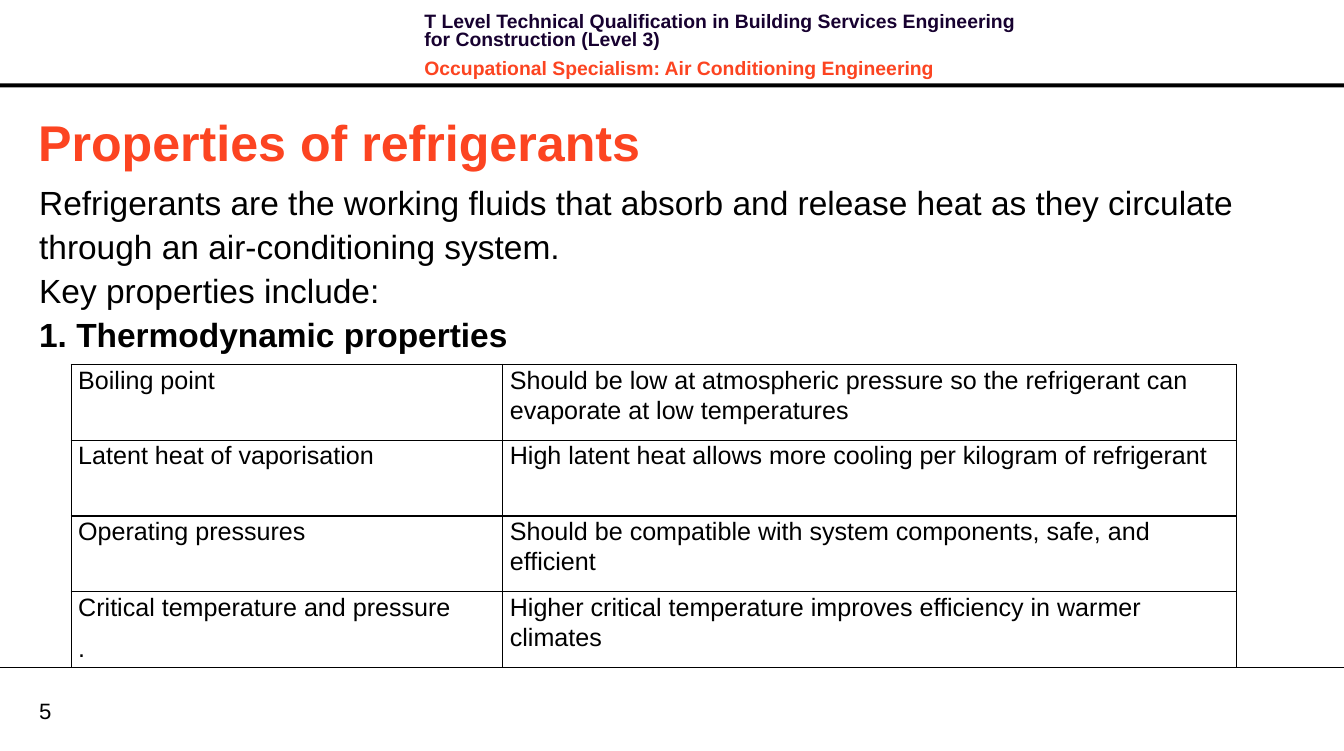
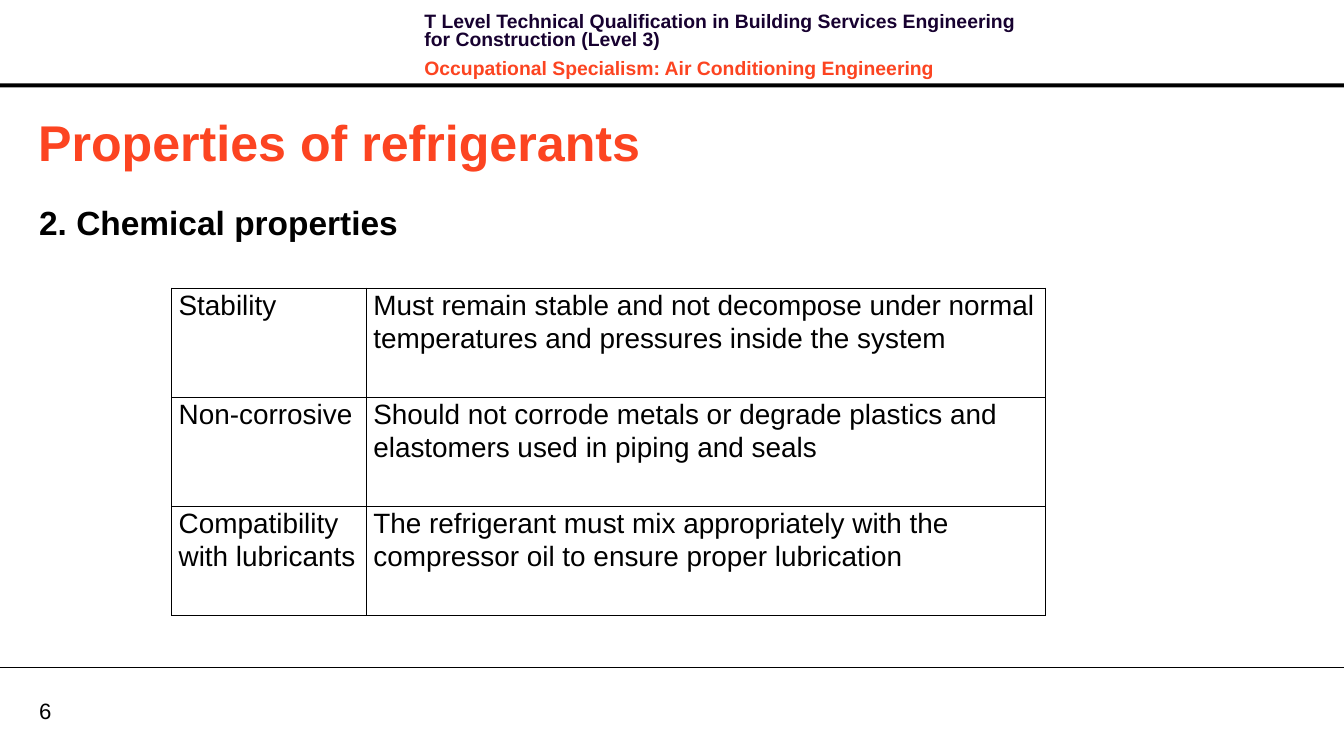
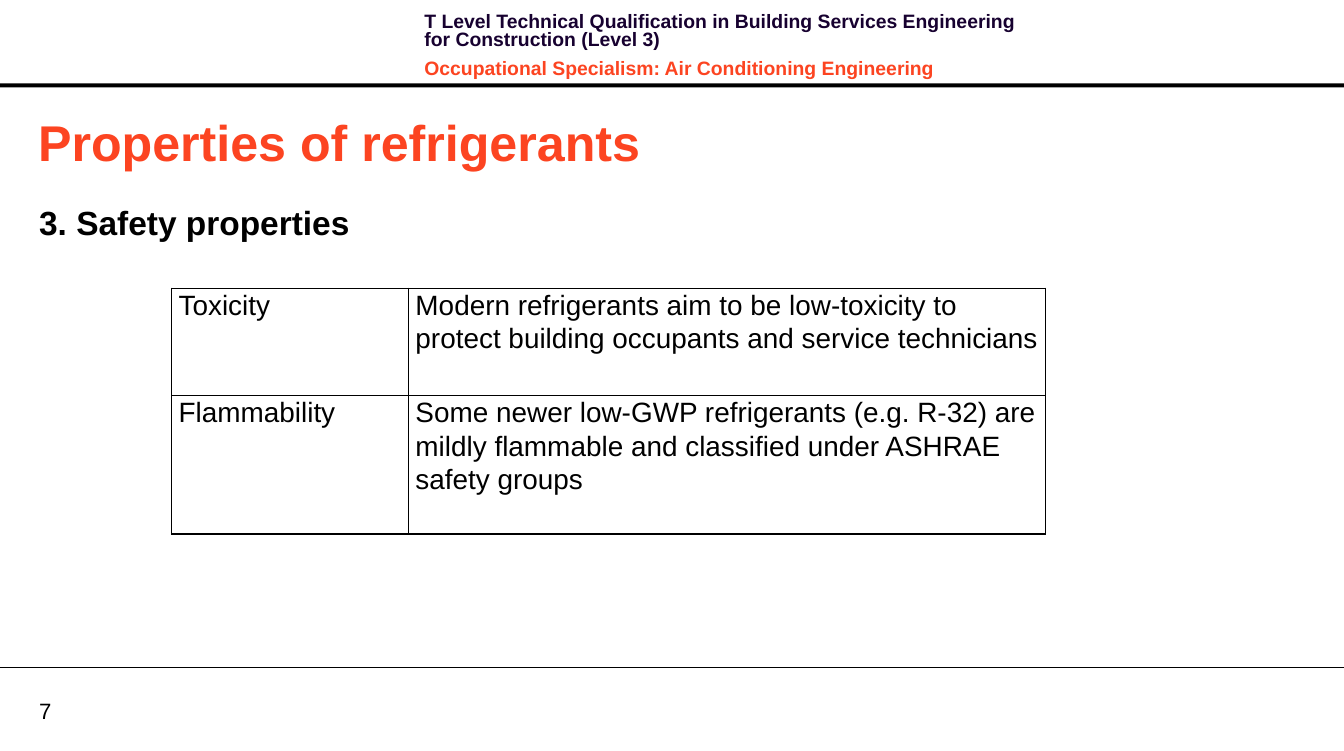
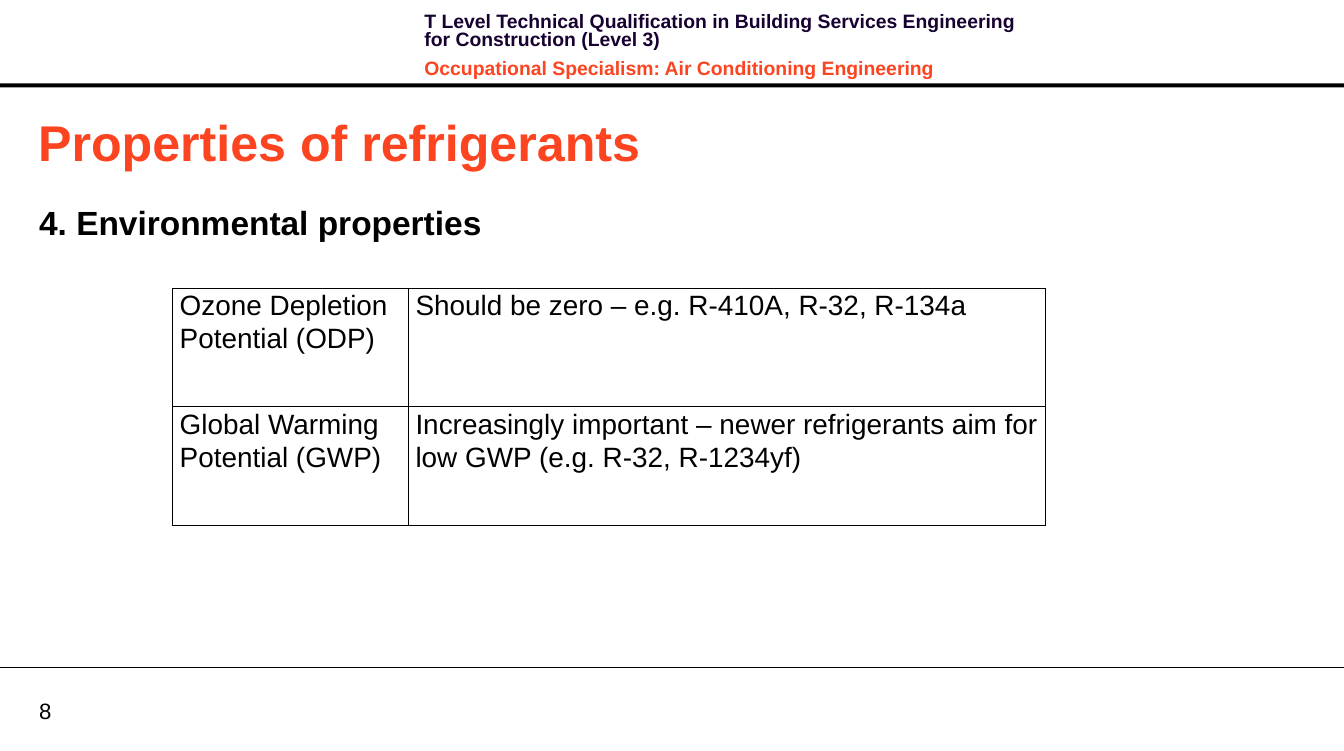
from dataclasses import dataclass

from lxml import etree
from pptx import Presentation
from pptx.dml.color import RGBColor
from pptx.enum.shapes import MSO_CONNECTOR, MSO_SHAPE
from pptx.enum.text import MSO_ANCHOR, MSO_AUTO_SIZE, PP_ALIGN
from pptx.oxml.ns import qn
from pptx.util import Inches, Pt

TOP, MIDDLE = MSO_ANCHOR.TOP, MSO_ANCHOR.MIDDLE
LEFT = PP_ALIGN.LEFT
NO_AUTOFIT = MSO_AUTO_SIZE.NONE
RECTANGLE = MSO_SHAPE.RECTANGLE
STRAIGHT = MSO_CONNECTOR.STRAIGHT
TITLE_ONLY = 5
FIRST_NUMBER = 5


@dataclass(frozen=True)
class Theme:
    font: str = "Arial"
    ink: str = "000000"
    navy: str = "170130"
    accent: str = "FC4421"
    header_size: float = 13.9
    number_size: float = 15.9
    title_size: float = 36
    body_size: float = 24
    rule_width: float = 0.75
    border_width: float = 1


THEME = Theme()


@dataclass(frozen=True)
class Box:
    left: int
    top: int
    width: int
    height: int

    def inner(self, left, top, width, height):
        """Return an inner box given in percent of this one."""
        return Box(self.left + round(self.width * left / 100),
                   self.top + round(self.height * top / 100),
                   round(self.width * width / 100),
                   round(self.height * height / 100))

    @property
    def place(self):
        return self.left, self.top, self.width, self.height


PAGE = Box(0, 0, Inches(13.39), Inches(7.48))
HEADER_RULE = PAGE.inner(0, 11.1, 100, 0.53)
HEADER_TEXT = PAGE.inner(30.84, 1.2, 47.2, 8.56)
FOOTER_RULE = PAGE.inner(0, 88.9, 100, 0)
NUMBER = PAGE.inner(2.91, 92.78, 4.78, 3.61)
TITLE = PAGE.inner(2.09, 14.17, 85.66, 9.49)
INTRO = PAGE.inner(2.91, 23.66, 92.98, 24.87)
HEADING = PAGE.inner(2.91, 26.34, 84.76, 12.03)

HEADER_LINES = [
    ("T Level Technical Qualification in Building Services Engineering "
     "for Construction (Level 3)", THEME.navy),
    ("Occupational Specialism: Air Conditioning Engineering", THEME.accent),
]


@dataclass(frozen=True)
class PropertySlide:
    heading: str
    rows: list
    table_box: Box
    column_weights: tuple
    row_weights: tuple
    text_size: float = 20
    intro: tuple = ()


PROPERTY_SLIDES = [
    PropertySlide(
        "1. Thermodynamic properties",
        [("Boiling point",
          "Should be low at atmospheric pressure so the refrigerant can "
          "evaporate at low temperatures"),
         ("Latent heat of vaporisation",
          "High latent heat allows more cooling per kilogram of refrigerant"),
         ("Operating pressures",
          "Should be compatible with system components, safe, and efficient"),
         ("Critical temperature and pressure\n.",
          "Higher critical temperature improves efficiency in warmer climates")],
        PAGE.inner(5.3, 48.53, 86.71, 40.37), (4.3, 7.31), (1, 1, 1, 1), 18,
        ("Refrigerants are the working fluids that absorb and release heat as "
         "they circulate through an air‑conditioning system.",
         "Key properties include:")),
    PropertySlide(
        "2. Chemical properties",
        [("Stability",
          "Must remain stable and not decompose under normal temperatures "
          "and pressures inside the system"),
         ("Non‑corrosive",
          "Should not corrode metals or degrade plastics and elastomers used "
          "in piping and seals"),
         ("Compatibility with lubricants",
          "The refrigerant must mix appropriately with the compressor oil to "
          "ensure proper lubrication")],
        PAGE.inner(12.77, 38.37, 65.05, 43.58), (1.94, 6.77), (1, 1, 1)),
    PropertySlide(
        "3. Safety properties",
        [("Toxicity",
          "Modern refrigerants aim to be low-toxicity to protect building "
          "occupants and service technicians"),
         ("Flammability",
          "Some newer low‑GWP refrigerants (e.g. R‑32) are mildly flammable "
          "and classified under ASHRAE safety groups")],
        PAGE.inner(12.77, 38.37, 65.05, 32.75), (2.36, 6.35), (1.07, 1.38)),
    PropertySlide(
        "4. Environmental properties",
        [("Ozone Depletion Potential (ODP)",
          "Should be zero – e.g. R‑410A, R‑32, R‑134a"),
         ("Global Warming Potential (GWP)",
          "Increasingly important – newer refrigerants aim for low GWP "
          "(e.g. R‑32, R‑1234yf)")],
        PAGE.inner(12.85, 38.37, 64.97, 31.55), (2.35, 6.35), (1, 1)),
]


def add_run(paragraph, text, size, color=THEME.ink, bold=False):
    paragraph.alignment = LEFT
    run = paragraph.add_run()
    run.text = text
    run.font.name = THEME.font
    run.font.size = Pt(size)
    run.font.bold = bold
    run.font.color.rgb = RGBColor.from_string(color)


def paragraphs(frame, count):
    """Yield the frame's first paragraph, then new ones up to count."""
    for index in range(count):
        yield frame.add_paragraph() if index else frame.paragraphs[0]


def prepare_frame(frame, inset_x=0.0, inset_y=0.0, anchor=TOP):
    frame.word_wrap = True
    frame.auto_size = NO_AUTOFIT
    frame.vertical_anchor = anchor
    frame.margin_left = frame.margin_right = Inches(inset_x)
    frame.margin_top = frame.margin_bottom = Inches(inset_y)
    return frame


def add_text_frame(slide, box, **layout):
    return prepare_frame(slide.shapes.add_textbox(*box.place).text_frame, **layout)


def add_header(slide, text_box, rule_box):
    rule = slide.shapes.add_shape(RECTANGLE, *rule_box.place)
    rule.shadow.inherit = False
    rule.fill.solid()
    rule.fill.fore_color.rgb = RGBColor.from_string(THEME.ink)
    rule.line.fill.background()

    frame = add_text_frame(slide, text_box, inset_x=0.1, inset_y=0.05)
    lines = paragraphs(frame, len(HEADER_LINES))
    for index, (line, (text, color)) in enumerate(zip(lines, HEADER_LINES)):
        line.line_spacing = Pt(13)
        line.space_before = Pt(4 if index else 0)
        line.space_after = Pt(4)
        add_run(line, text, THEME.header_size, color, bold=True)


def add_footer(slide, number, number_box, rule_box):
    rule = slide.shapes.add_connector(
        STRAIGHT, rule_box.left, rule_box.top,
        rule_box.left + rule_box.width, rule_box.top)
    rule.line.color.rgb = RGBColor.from_string(THEME.ink)
    rule.line.width = Pt(THEME.rule_width)
    etree.SubElement(rule._element.spPr, qn("a:effectLst"))

    frame = add_text_frame(slide, number_box, anchor=MIDDLE)
    add_run(frame.paragraphs[0], str(number), THEME.number_size)


def set_title(slide, text, box):
    title = slide.shapes.title
    title.left, title.top, title.width, title.height = box.place
    frame = prepare_frame(title.text_frame, inset_x=0.1, inset_y=0.05)
    add_run(frame.paragraphs[0], text, THEME.title_size, THEME.accent, bold=True)


def add_body(slide, intro, heading, box):
    texts = [*intro, heading]
    frame = add_text_frame(slide, box)
    for line, text in zip(paragraphs(frame, len(texts)), texts):
        line.line_spacing = 1.1
        add_run(line, text, THEME.body_size, bold=text == heading)


def set_borders(cell):
    properties = cell._tc.get_or_add_tcPr()
    for index, side in enumerate(("a:lnL", "a:lnR", "a:lnT", "a:lnB")):
        border = etree.Element(qn(side), w=str(Pt(THEME.border_width)))
        fill = etree.SubElement(border, qn("a:solidFill"))
        etree.SubElement(fill, qn("a:srgbClr"), val=THEME.ink)
        properties.insert(index, border)


def fill_cell(cell, text, size):
    cell.fill.background()
    set_borders(cell)
    cell.vertical_anchor = TOP
    cell.margin_left = cell.margin_right = Inches(0.07)
    cell.margin_top = cell.margin_bottom = 0
    texts = text.split("\n")
    for line, line_text in zip(paragraphs(cell.text_frame, len(texts)), texts):
        line.line_spacing = 1.07
        line.space_after = Pt(8)
        add_run(line, line_text, size)


def shares(total, weights):
    return [round(total * weight / sum(weights)) for weight in weights]


def add_property_table(slide, content):
    box = content.table_box
    table = slide.shapes.add_table(
        len(content.rows), len(content.column_weights), *box.place).table
    table.first_row = table.horz_banding = False
    for column, width in zip(table.columns, shares(box.width, content.column_weights)):
        column.width = width
    for row, height in zip(table.rows, shares(box.height, content.row_weights)):
        row.height = height
    for row, texts in zip(table.rows, content.rows):
        for cell, text in zip(row.cells, texts):
            fill_cell(cell, text, content.text_size)


def add_property_slide(deck, number, content):
    slide = deck.slides.add_slide(deck.slide_layouts[TITLE_ONLY])
    add_header(slide, HEADER_TEXT, HEADER_RULE)
    add_footer(slide, number, NUMBER, FOOTER_RULE)
    set_title(slide, "Properties of refrigerants", TITLE)
    add_body(slide, content.intro, content.heading,
             INTRO if content.intro else HEADING)
    add_property_table(slide, content)


def main():
    deck = Presentation()
    deck.slide_width, deck.slide_height = PAGE.width, PAGE.height
    for number, content in enumerate(PROPERTY_SLIDES, FIRST_NUMBER):
        add_property_slide(deck, number, content)
    deck.save("out.pptx")


if __name__ == "__main__":
    main()
